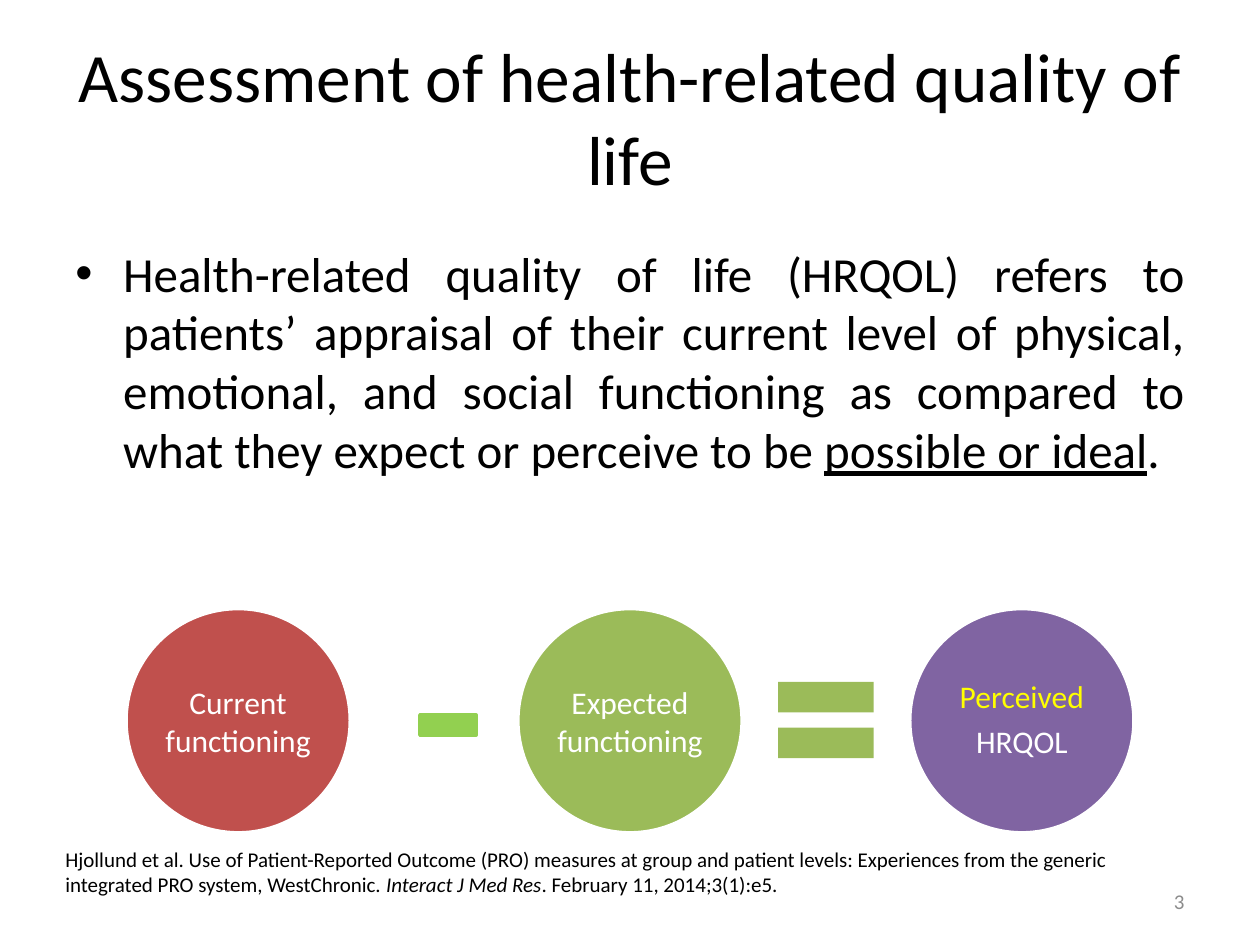
"""Build the slide on assessing health-related quality of life."""
import dataclasses

import lxml.etree
import pptx
import pptx.dml.color
import pptx.enum.shapes
import pptx.enum.text
import pptx.oxml.ns
import pptx.util

Inches = pptx.util.Inches
Pt = pptx.util.Pt
Align = pptx.enum.text.PP_ALIGN
Anchor = pptx.enum.text.MSO_ANCHOR
Shape = pptx.enum.shapes.MSO_SHAPE


@dataclasses.dataclass(frozen=True)
class Theme:
    font: str = "Calibri"
    black: str = "000000"
    white: str = "FFFFFF"
    grey: str = "8C8C8C"
    red: str = "C0504D"
    green: str = "9BBB59"
    purple: str = "8064A2"
    yellow: str = "FFFF00"
    bright_green: str = "92D050"
    title_size: float = 39.6
    body_size: float = 28
    label_size: float = 18
    note_size: float = 12


def rgb(value):
    return pptx.dml.color.RGBColor.from_string(value)


def add_span(para, text, *, font, size, color, underline=None, italic=None):
    span = para.add_run()
    span.text = text
    span.font.name = font
    span.font.size = Pt(size)
    span.font.color.rgb = rgb(color)
    span.font.underline = underline
    span.font.italic = italic


class SlideBuilder:
    def __init__(self, page, theme):
        self.page = page
        self.theme = theme

    def fill_para(self, para, spans, size, color, align):
        para.alignment = align
        for text, extra in spans:
            look = {"font": self.theme.font, "size": size, "color": color, **extra}
            add_span(para, text, **look)

    def text(self, left, top, width, height, spans, size, color=None,
             align=Align.LEFT, anchor=Anchor.TOP):
        box = self.page.shapes.add_textbox(
            Inches(left), Inches(top), Inches(width), Inches(height))
        frame = box.text_frame
        frame.word_wrap = True
        frame.vertical_anchor = anchor
        para = frame.paragraphs[0]
        self.fill_para(para, spans, size, color or self.theme.black, align)
        return para

    def bullet(self, para, indent):
        properties = para._p.get_or_add_pPr()
        properties.set("marL", str(Inches(indent)))
        properties.set("indent", str(-Inches(indent)))
        font = lxml.etree.SubElement(properties, pptx.oxml.ns.qn("a:buFont"))
        font.set("typeface", "Arial")
        mark = lxml.etree.SubElement(properties, pptx.oxml.ns.qn("a:buChar"))
        mark.set("char", "•")

    def shape(self, kind, left, top, width, height, fill, line=None):
        shape = self.page.shapes.add_shape(
            kind, Inches(left), Inches(top), Inches(width), Inches(height))
        shape.shadow.inherit = False
        shape.fill.solid()
        shape.fill.fore_color.rgb = rgb(fill)
        if line:
            shape.line.color.rgb = rgb(line)
            shape.line.width = Pt(2)
        else:
            shape.line.fill.background()
        return shape

    def circle(self, left, top, size, fill, lines):
        circle = self.shape(Shape.OVAL, left, top, size, size, fill, self.theme.white)
        frame = circle.text_frame
        frame.word_wrap = True
        frame.vertical_anchor = Anchor.MIDDLE
        frame.margin_left = frame.margin_right = Inches(0.03)
        frame.margin_top = frame.margin_bottom = Inches(0.03)
        for index, (text, color) in enumerate(lines):
            para = frame.add_paragraph() if index else frame.paragraphs[0]
            self.fill_para(para, [(text, {})], self.theme.label_size, color, Align.CENTER)
            if len(lines) > 1:
                para.line_spacing = 0.9
                para.space_after = Pt(6.3)


def main():
    theme = Theme()
    deck = pptx.Presentation()
    deck.slide_width, deck.slide_height = Inches(10), Inches(7.5)
    page = deck.slides.add_slide(deck.slide_layouts[6])
    builder = SlideBuilder(page, theme)

    builder.text(7.17, 6.95, 2.33, 0.4, [("3", {})], theme.note_size, theme.grey,
                 Align.RIGHT, Anchor.MIDDLE)
    builder.text(0.5, 0.3, 9, 1.25,
                 [("Assessment of health-related quality of life", {})],
                 theme.title_size, align=Align.CENTER, anchor=Anchor.MIDDLE)
    definition = builder.text(0.5, 1.88, 9, 4.95, [
        ("Health-related quality of life (HRQOL) refers to patients’ appraisal of "
         "their current level of physical, emotional, and social functioning as "
         "compared to what they expect or perceive to be ", {}),
        ("possible or ideal", {"underline": True}),
        (".", {}),
    ], theme.body_size, align=Align.JUSTIFY)
    builder.bullet(definition, 0.38)

    circles = [
        (theme.red, [("Current functioning", theme.white)]),
        (theme.green, [("Expected functioning ", theme.white)]),
        (theme.purple, [("Perceived", theme.yellow), ("HRQOL", theme.white)]),
    ]
    for index, (fill, lines) in enumerate(circles):
        builder.circle(1 + 3.11 * index, 4.83, 1.78, fill, lines)
    builder.shape(Shape.MATH_EQUAL, 6.04, 5.2, 1.03, 1.03, theme.green)
    builder.shape(Shape.MATH_MINUS, 3.25, 5.42, 0.61, 0.67,
                  theme.bright_green, theme.bright_green)

    builder.text(0.42, 6.67, 9.17, 0.81, [
        ("Hjollund et al. Use of Patient-Reported Outcome (PRO) measures at group "
         "and patient levels: Experiences from the generic integrated PRO system, "
         "WestChronic. ", {}),
        ("Interact J Med Res", {"italic": True}),
        (". February 11, 2014;3(1):e5.", {}),
    ], theme.note_size)
    deck.save("out.pptx")


if __name__ == "__main__":
    main()
